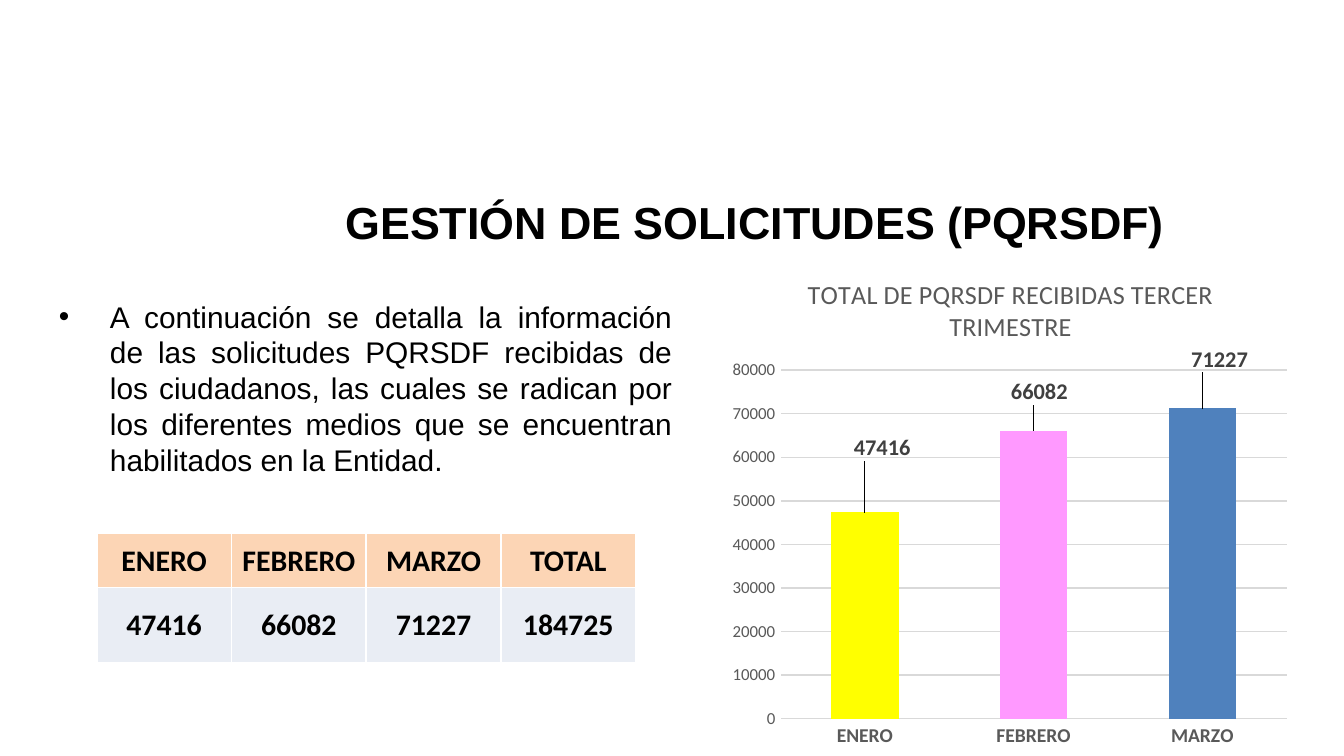
from lxml import etree
from pptx import Presentation
from pptx import util as u
from pptx.chart.data import CategoryChartData
from pptx.dml.color import RGBColor
from pptx.enum import chart as ch, text
from pptx.oxml import parse_xml
from pptx.oxml.ns import nsdecls, qn

TITLE = "GESTIÓN DE SOLICITUDES (PQRSDF)"
INTRO = ("A continuación se detalla la información de las solicitudes PQRSDF "
         "recibidas de los ciudadanos, las cuales se radican por los diferentes "
         "medios que se encuentran habilitados en la Entidad.")
CHART_TITLE = "TOTAL DE PQRSDF RECIBIDAS TERCER TRIMESTRE"
MONTHS = [
    {"name": "ENERO", "total": 47416, "color": "FFFF00", "label_shift": (0.03, -0.09)},
    {"name": "FEBRERO", "total": 66082, "color": "FF99FF", "label_shift": (0.01, -0.04)},
    {"name": "MARZO", "total": 71227, "color": "4F81BD", "label_shift": (0.03, -0.06)},
]
THEME = {
    "text_font": "Arial", "data_font": "Calibri",
    "black": "000000", "gray": "595959", "label": "404040", "grid": "D9D9D9",
    "header": "FCD5B5", "body": "E9EDF4", "border": "FFFFFF", "series": "4F81BD",
    "title_size": 24, "text_size": 16, "chart_title_size": 14,
    "label_size": 12, "category_size": 10.5, "value_size": 9, "chart_size": 10,
}
NO_LEADER_LINES = (
    f'<c:extLst {nsdecls("c")}><c:ext uri="{{CE6537A1-D6FC-4f65-9D91-7224C49458BB}}" '
    'xmlns:c15="http://schemas.microsoft.com/office/drawing/2012/chart">'
    '<c15:showLeaderLines val="0"/></c:ext></c:extLst>')


def rgb(name):
    return RGBColor.from_string(THEME.get(name, name))


def style_font(font, family, size, color, bold=False):
    font.name = THEME[family]
    font.size = u.Pt(THEME[size])
    font.color.rgb = rgb(color)
    font.bold = bold


def place(shape, left, top, width, height):
    shape.left, shape.top = u.Inches(left), u.Inches(top)
    shape.width, shape.height = u.Inches(width), u.Inches(height)


def chart_layout(**values):
    layout = parse_xml(f"<c:layout {nsdecls('c')}><c:manualLayout/></c:layout>")
    for tag, value in values.items():
        etree.SubElement(layout[0], qn(f"c:{tag}")).set("val", str(value))
    return layout


def add_title(slide):
    title = slide.shapes.title
    place(title, 2.47, 1.18, 7.36, 0.94)
    frame = title.text_frame
    frame.text = TITLE
    frame.word_wrap = True
    frame.vertical_anchor = text.MSO_ANCHOR.MIDDLE
    paragraph = frame.paragraphs[0]
    paragraph.alignment = text.PP_ALIGN.LEFT
    style_font(paragraph.font, "text_font", "title_size", "black", True)


def add_intro(slide):
    box = slide.shapes.add_textbox(*map(u.Inches, (0.34, 2.17, 4.76, 1.51)))
    frame = box.text_frame
    frame.word_wrap = True
    paragraph = frame.paragraphs[0]
    paragraph.text = INTRO
    properties = paragraph._p.get_or_add_pPr()
    properties.set("marL", str(u.Inches(0.38)))
    properties.set("indent", str(u.Inches(-0.38)))
    etree.SubElement(properties, qn("a:buFont")).set("typeface", THEME["text_font"])
    etree.SubElement(properties, qn("a:buChar")).set("char", "•")
    paragraph.alignment = text.PP_ALIGN.JUSTIFY
    style_font(paragraph.font, "text_font", "text_size", "black")


def add_borders(cell):
    properties = cell._tc.get_or_add_tcPr()
    for index, side in enumerate(("lnL", "lnR", "lnT", "lnB")):
        line = parse_xml(
            f'<a:{side} {nsdecls("a")} w="{u.Pt(1)}"><a:solidFill>'
            f'<a:srgbClr val="{THEME["border"]}"/></a:solidFill></a:{side}>')
        properties.insert(index, line)


def add_totals_table(slide):
    totals = [month["total"] for month in MONTHS]
    rows = [[month["name"] for month in MONTHS] + ["TOTAL"], totals + [sum(totals)]]
    frame = slide.shapes.add_table(2, len(rows[0]), *map(u.Inches, (0.72, 3.97, 4.01, 0.96)))
    table = frame.table
    for row, height in zip(table.rows, (0.4, 0.56)):
        row.height = u.Inches(height)
    for row, values, fill in zip(table.rows, rows, ("header", "body")):
        for cell, value in zip(row.cells, values):
            cell.text = str(value)
            cell.fill.solid()
            cell.fill.fore_color.rgb = rgb(fill)
            cell.vertical_anchor = text.MSO_ANCHOR.MIDDLE
            cell.margin_left = cell.margin_right = cell.margin_top = u.Inches(0.01)
            cell.margin_bottom = 0
            paragraph = cell.text_frame.paragraphs[0]
            paragraph.alignment = text.PP_ALIGN.CENTER
            style_font(paragraph.font, "data_font", "text_size", "black", True)
            add_borders(cell)


def format_axes(chart):
    for axis, size, bold in ((chart.category_axis, "category_size", True),
                             (chart.value_axis, "value_size", False)):
        axis.major_tick_mark = axis.minor_tick_mark = ch.XL_TICK_MARK.NONE
        axis.format.line.fill.background()
        style_font(axis.tick_labels.font, "data_font", size, "gray", bold)
    value_axis = chart.value_axis
    value_axis.minimum_scale, value_axis.maximum_scale = 0, 80000
    value_axis.major_unit = 10000
    value_axis.has_major_gridlines = True
    grid = value_axis.major_gridlines.format.line
    grid.color.rgb = rgb("grid")
    grid.width = u.Pt(0.75)


def add_monthly_chart(slide):
    data = CategoryChartData()
    data.categories = [month["name"] for month in MONTHS]
    data.add_series("Series 1", [month["total"] for month in MONTHS])
    chart = slide.shapes.add_chart(
        ch.XL_CHART_TYPE.COLUMN_CLUSTERED,
        *map(u.Inches, (5.38, 1.89, 4.28, 3.76)), data).chart
    style_font(chart.font, "data_font", "chart_size", "black")
    chart.has_legend = False
    chart.has_title = True
    chart.chart_title.include_in_layout = False
    title_frame = chart.chart_title.text_frame
    title_frame.text = CHART_TITLE
    style_font(title_frame.paragraphs[0].font, "data_font", "chart_title_size", "gray")
    format_axes(chart)

    plot = chart.plots[0]
    plot.gap_width = 150
    plot.vary_by_categories = False
    plot_area = chart._chartSpace.chart.plotArea
    for layout in plot_area.findall(qn("c:layout")):
        plot_area.remove(layout)
    plot_area.insert(0, chart_layout(layoutTarget="inner", xMode="edge", yMode="edge",
                                     x=0.1, y=0.23, w=0.88, h=0.69))
    series = plot.series[0]
    series.format.fill.solid()
    series.format.fill.fore_color.rgb = rgb("series")
    labels = series.data_labels
    labels.show_value = True
    style_font(labels.font, "data_font", "label_size", "label", True)
    for index, month in enumerate(MONTHS):
        point = series.points[index]
        point.format.fill.solid()
        point.format.fill.fore_color.rgb = rgb(month["color"])
        label = point.data_label
        style_font(label.font, "data_font", "label_size", "label", True)
        label.position = ch.XL_LABEL_POSITION.OUTSIDE_END
        x, y = month["label_shift"]
        labels._element.findall(qn("c:dLbl"))[index].insert(1, chart_layout(x=x, y=y))
    labels._element.append(parse_xml(NO_LEADER_LINES))


def main():
    presentation = Presentation()
    presentation.slide_width = u.Inches(10)
    presentation.slide_height = u.Inches(10 * 9 / 16)
    slide = presentation.slides.add_slide(presentation.slide_layouts[5])
    add_title(slide)
    add_intro(slide)
    add_totals_table(slide)
    add_monthly_chart(slide)
    presentation.save("out.pptx")


if __name__ == "__main__":
    main()
